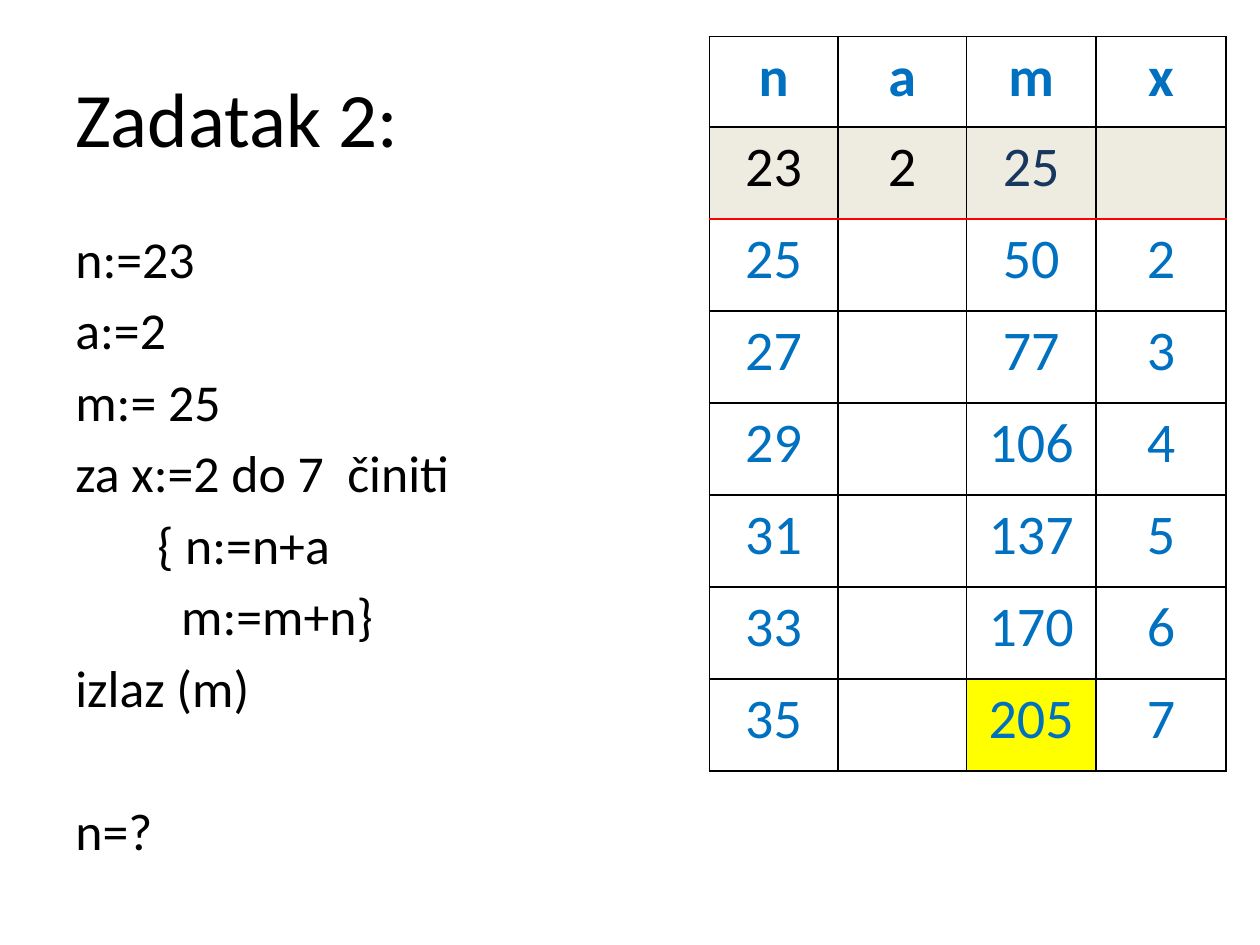
from dataclasses import dataclass

from lxml.etree import SubElement
from pptx import Presentation
from pptx.dml.color import RGBColor
from pptx.enum.text import MSO_ANCHOR, PP_ALIGN
from pptx.oxml.ns import qn
from pptx.util import Inches, Pt


@dataclass(frozen=True)
class Theme:
    font: str = "Calibri"
    title_size: float = 44
    code_size: float = 29.6
    table_size: float = 32
    black: str = "000000"
    white: str = "FFFFFF"
    blue: str = "0070C0"
    navy: str = "17375E"
    beige: str = "EEECE1"
    yellow: str = "FFFF00"
    red: str = "FF0000"


THEME = Theme()


def style(para, size, color, bold=False):
    for span in para.runs:
        span.font.name = THEME.font
        span.font.size = Pt(size)
        span.font.bold = bold
        span.font.color.rgb = RGBColor.from_string(color)


def set_borders(cell, top, bottom):
    """Draw 1 pt borders: black sides, with the given top and bottom colours."""
    properties = cell._tc.get_or_add_tcPr()
    sides = {"lnL": THEME.black, "lnR": THEME.black, "lnT": top, "lnB": bottom}
    for index, (tag, color) in enumerate(sides.items()):
        line = properties.makeelement(qn(f"a:{tag}"), {"w": str(Pt(1))})
        fill = SubElement(line, qn("a:solidFill"))
        SubElement(fill, qn("a:srgbClr"), val=color)
        properties.insert(index, line)


deck = Presentation()
deck.slide_width, deck.slide_height = Inches(10), Inches(7.5)
page = deck.slides.add_slide(deck.slide_layouts[6])

# Title
title = page.shapes.add_textbox(Inches(0.5), Inches(0.3), Inches(9), Inches(1.25))
title.text_frame.word_wrap = True
title.text_frame.vertical_anchor = MSO_ANCHOR.MIDDLE
title.text_frame.text = "Zadatak 2:"
style(title.text_frame.paragraphs[0], THEME.title_size, THEME.black)

# Algorithm: text, left indent in inches, space before in points
LINE_GAP, QUESTION_GAP = 5.3, 46.7
algorithm = [
    ("n:=23", 0, 0),
    ("a:=2", 0, LINE_GAP),
    ("m:= 25", 0, LINE_GAP),
    ("za x:=2 do 7  činiti", 0, LINE_GAP),
    ("{ n:=n+a", 0.65, LINE_GAP),
    ("m:=m+n}", 0.84, LINE_GAP),
    ("izlaz (m)", 0, LINE_GAP),
    ("n=?", 0, QUESTION_GAP),
]
code = page.shapes.add_textbox(Inches(0.5), Inches(1.75), Inches(4.03), Inches(4.95))
code.text_frame.word_wrap = True
code.text_frame.text = "\n".join(text for text, _, _ in algorithm)
for para, (_, indent, gap) in zip(code.text_frame.paragraphs, algorithm):
    para._p.get_or_add_pPr().set("marL", str(Inches(indent)))
    para.space_before = Pt(gap)
    style(para, THEME.code_size, THEME.black)

# Trace table
START_ROW = 1
trace = [["n", "a", "m", "x"], ["23", "2", "25", ""]]
n, a, m = 23, 2, 25
for x in range(2, 8):
    n += a
    m += n
    trace.append([str(n), "", str(m), str(x)])

text_colors = {(START_ROW, 0): THEME.black, (START_ROW, 1): THEME.black,
               (START_ROW, 2): THEME.navy}
result_cell = (len(trace) - 1, 2)

table = page.shapes.add_table(len(trace), 4, Inches(5.63), Inches(0.29),
                              Inches(4.1), Inches(5.83)).table
table.first_row = table.horz_banding = False
for column, width in zip(table.columns, (1.02, 1.02, 1.03, 1.03)):
    column.width = Inches(width)
for r, values in enumerate(trace):
    table.rows[r].height = Inches(0.72 if r == 0 else 0.73)
    for c, value in enumerate(values):
        cell = table.cell(r, c)
        cell.text_frame.text = value
        para = cell.text_frame.paragraphs[0]
        para.alignment = PP_ALIGN.CENTER
        style(para, THEME.table_size, text_colors.get((r, c), THEME.blue), bold=r == 0)
        fill = THEME.beige if r == START_ROW else THEME.white
        if (r, c) == result_cell:
            fill = THEME.yellow
        cell.fill.solid()
        cell.fill.fore_color.rgb = RGBColor.from_string(fill)
        set_borders(cell,
                    top=THEME.red if r == START_ROW + 1 else THEME.black,
                    bottom=THEME.red if r == START_ROW else THEME.black)

deck.save("out.pptx")
